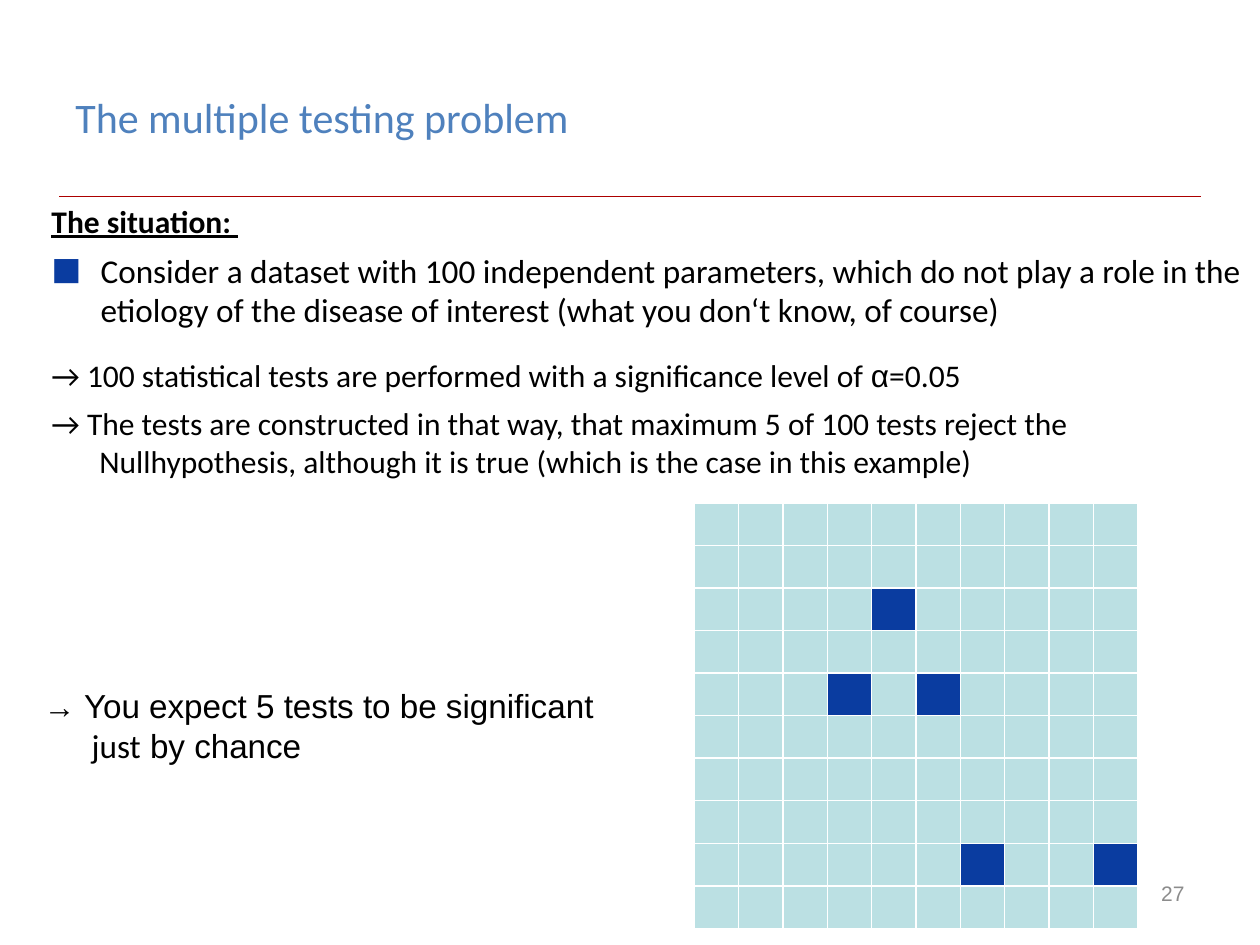
from lxml import etree
from pptx import Presentation
from pptx.dml.color import RGBColor
from pptx.enum.shapes import MSO_CONNECTOR
from pptx.enum.text import MSO_ANCHOR, PP_ALIGN
from pptx.oxml.ns import qn
from pptx.util import Inches, Pt

STRAIGHT = MSO_CONNECTOR.STRAIGHT
MIDDLE = MSO_ANCHOR.MIDDLE
TOP = MSO_ANCHOR.TOP
LEFT = PP_ALIGN.LEFT
RIGHT = PP_ALIGN.RIGHT

COLORS = {
    "title": "4F81BD",
    "text": "000000",
    "number": "8C8C8C",
    "rule": "AC0000",
    "test": "BBE0E3",
    "rejected": "0A3CA0",
    "border": "FFFFFF",
}
GRID_SIZE = 10
REJECTED_TESTS = {(2, 4), (4, 3), (4, 5), (8, 6), (8, 9)}


def rgb(name):
    return RGBColor.from_string(COLORS[name])


def add_color(parent, name):
    etree.SubElement(parent, qn("a:srgbClr"), val=COLORS[name])


def add_text_frame(slide, left, top, width, height, anchor=TOP):
    box = slide.shapes.add_textbox(
        Inches(left), Inches(top), Inches(width), Inches(height))
    frame = box.text_frame
    frame.word_wrap = True
    frame.vertical_anchor = anchor
    return frame


def add_run(paragraph, text, size, font="Calibri", color="text", strong=False):
    run = paragraph.add_run()
    run.text = text
    run.font.size = Pt(size)
    run.font.name = font
    run.font.color.rgb = rgb(color)
    if strong:
        run.font.bold = True
        run.font.underline = True


def set_hanging_indent(paragraph, indent):
    properties = paragraph._p.get_or_add_pPr()
    properties.set("marL", str(Inches(indent)))
    properties.set("indent", str(-Inches(indent)))


def add_square_bullet(paragraph):
    properties = paragraph._p.get_or_add_pPr()
    add_color(etree.SubElement(properties, qn("a:buClr")), "rejected")
    etree.SubElement(properties, qn("a:buSzPct"), val="150000")
    etree.SubElement(properties, qn("a:buFont"), typeface="Arial")
    etree.SubElement(properties, qn("a:buChar"), char="■")


def add_rule(slide):
    rule = slide.shapes.add_connector(
        STRAIGHT, Inches(0.47), Inches(1.56), Inches(9.53), Inches(1.56))
    rule.line.color.rgb = rgb("rule")
    rule.line.width = Pt(0.25)
    etree.SubElement(rule._element.spPr, qn("a:effectLst"))


def add_label(slide, area, text, size, font, color, align=LEFT):
    paragraph = add_text_frame(slide, *area, anchor=MIDDLE).paragraphs[0]
    paragraph.alignment = align
    add_run(paragraph, text, size, font, color)


def add_situation(slide):
    frame = add_text_frame(slide, 0.31, 1.55, 9.69, 2.72)
    heading = frame.paragraphs[0]
    dataset, level, construction = [frame.add_paragraph() for _ in range(3)]
    for paragraph in (heading, level, construction):
        set_hanging_indent(paragraph, 0.38)
    set_hanging_indent(dataset, 0.39)
    add_square_bullet(dataset)
    for paragraph in (dataset, level, construction):
        paragraph.space_before = Pt(6)
    dataset.space_after = Pt(9)

    add_run(heading, "The situation: ", 18, strong=True)
    add_run(dataset, "Consider a dataset with 100 independent parameters, "
            "which do not play a role in the etiology of the disease of "
            "interest (what you don‘t know, of course)", 19)
    add_run(level, "→ 100 statistical tests are performed with a "
            "significance level of ", 18)
    add_run(level, "α", 18, "Arial")
    add_run(level, "=0.05", 18)
    add_run(construction, "→ The tests are constructed in that way, that "
            "maximum 5 of 100 tests reject the Nullhypothesis, although it "
            "is true (which is the case in this example)", 18)


def add_conclusion(slide):
    conclusion = add_text_frame(slide, 0.25, 5.39, 5, 0.82).paragraphs[0]
    set_hanging_indent(conclusion, 0.38)
    add_run(conclusion, "→ ", 18, "Arial")
    add_run(conclusion, "You expect 5 tests to be significant ", 19, "Arial")
    add_run(conclusion, "just", 19)
    add_run(conclusion, " by chance", 19, "Arial")


def set_cell_borders(cell):
    properties = cell._tc.get_or_add_tcPr()
    for position, side in enumerate(("a:lnL", "a:lnR", "a:lnT", "a:lnB")):
        border = etree.Element(qn(side), w=str(Pt(1)))
        add_color(etree.SubElement(border, qn("a:solidFill")), "border")
        properties.insert(position, border)


def add_test_grid(slide):
    grid = slide.shapes.add_table(
        GRID_SIZE, GRID_SIZE, Inches(5.51), Inches(3.99),
        Inches(3.52), Inches(3.38)).table
    grid.first_row = False
    grid.horz_banding = False
    for row in range(GRID_SIZE):
        for column in range(GRID_SIZE):
            cell = grid.cell(row, column)
            cell.margin_top = cell.margin_bottom = 0
            cell.fill.solid()
            rejected = (row, column) in REJECTED_TESTS
            cell.fill.fore_color.rgb = rgb("rejected" if rejected else "test")
            set_cell_borders(cell)


def main():
    presentation = Presentation()
    presentation.slide_width = Inches(10)
    presentation.slide_height = Inches(7.5)
    slide = presentation.slides.add_slide(presentation.slide_layouts[6])
    add_rule(slide)
    add_label(slide, (7.17, 6.83, 2.33, 0.52), "27", 12, "Arial", "number", RIGHT)
    add_label(slide, (0.5, 0.3, 6.77, 1.25), "The multiple testing problem",
              24, "Calibri", "title")
    add_situation(slide)
    add_test_grid(slide)
    add_conclusion(slide)
    presentation.save("out.pptx")


if __name__ == "__main__":
    main()
